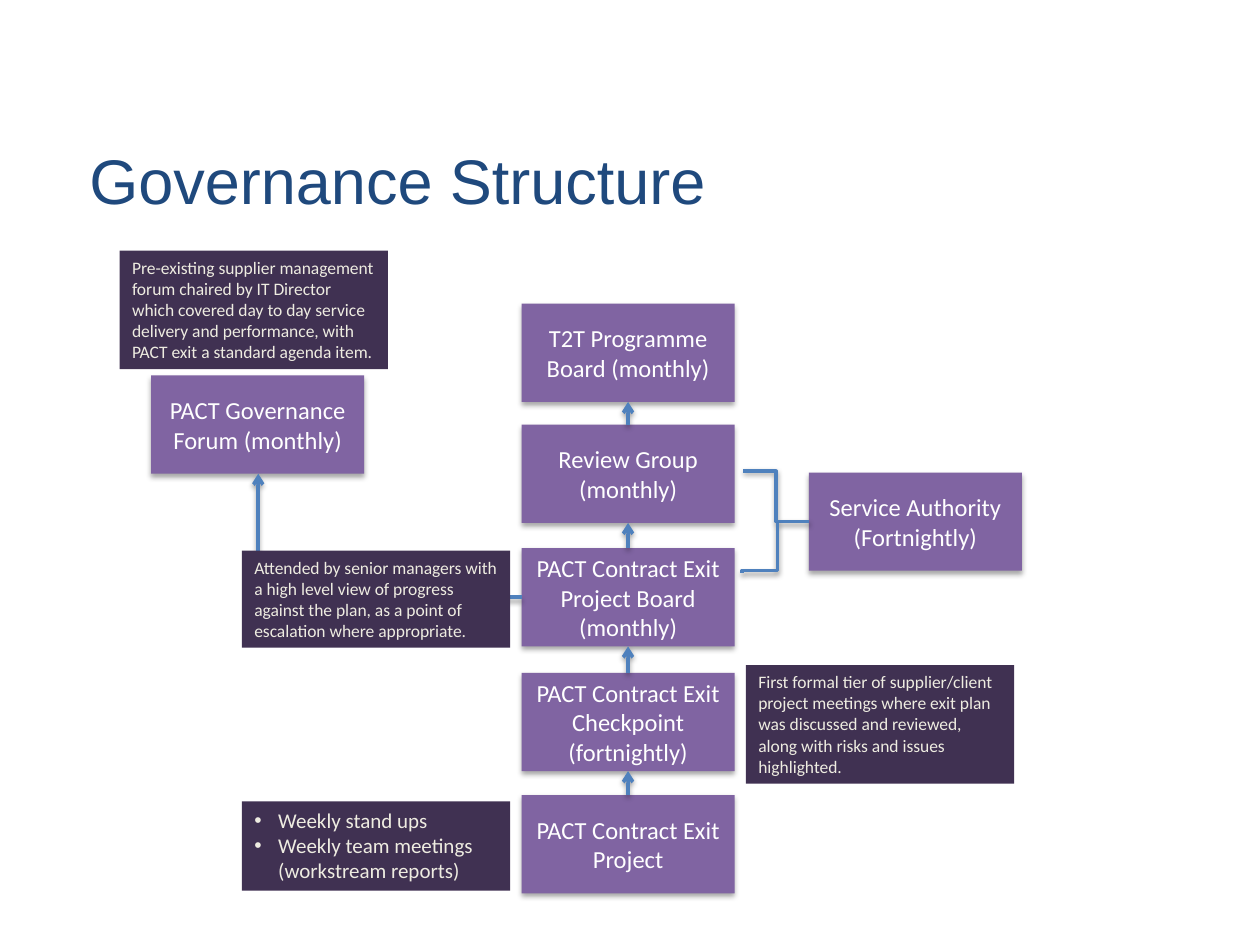
from pptx import Presentation
from pptx.dml.color import RGBColor
from pptx.enum.shapes import MSO_CONNECTOR as CONN, MSO_SHAPE as SHAPE
from pptx.enum.text import MSO_ANCHOR as ANCHOR, MSO_AUTO_SIZE as AUTO, PP_ALIGN as ALIGN
from pptx.oxml.ns import qn
from pptx.util import Inches, Pt
from lxml.etree import SubElement

COLORS = {"title": "1F497D", "box": "8064A2", "box_text": "FFFFFF",
          "line": "4F81BD", "note": "403152", "note_text": "EEECE1"}
TITLE = "Governance Structure"
BOX_W, BOX_H, NOTE_W, CHAIN_X = 1.69, 0.78, 2.13, 4.14
CHAIN = [
    ("T2T Programme Board (monthly)", 2.41),
    ("Review Group (monthly)", 3.37),
    ("PACT Contract Exit Project Board (monthly)", 4.35),
    ("PACT Contract Exit Checkpoint (fortnightly)", 5.34),
    ("PACT Contract Exit Project", 6.31),
]
SIDE_BOXES = [
    ("PACT Governance Forum (monthly)", 1.2, 2.98),
    ("Service Authority (Fortnightly)", 6.42, 3.75),
]
BOARD_TO_FORUM = (4.14, 4.74, 2.05, 3.76)
AUTHORITY_TO_REVIEW = (6.42, 4.14, 5.9, 3.74)
AUTHORITY_TO_BOARD = (6.23, 4.49, 5.83, 4.21)
NOTES = [
    (["Weekly stand ups", "Weekly team meetings (workstream reports)"], 1.92, 6.36, 0.71, 12, True),
    (["First formal tier of supplier/client project meetings where exit plan was discussed "
      "and reviewed, along with risks and issues highlighted."], 5.92, 5.28, 0.94, 10, False),
    (["Attended by senior managers with a high level view of progress against the plan, "
      "as a point of escalation where appropriate."], 1.92, 4.37, 0.77, 10, False),
    (["Pre-existing supplier management forum chaired by IT Director which covered day to day "
      "service delivery and performance, with PACT exit a standard agenda item."],
     0.95, 1.99, 0.94, 10, False),
]


def rgb(name):
    return RGBColor.from_string(COLORS[name])


def add_run(p, text, size, color, font="Calibri"):
    r = p.add_run()
    r.text = text
    r.font.size, r.font.name = Pt(size), font
    r.font.color.rgb = rgb(color)


def add_shadow(shape, alpha, dist):
    spPr = shape._element.spPr
    effects = spPr.find(qn("a:effectLst"))
    if effects is None:
        effects = SubElement(spPr, qn("a:effectLst"))
    shadow = SubElement(effects, qn("a:outerShdw"), blurRad=str(Pt(3.1)),
                        dist=str(Pt(dist)), dir="5400000", rotWithShape="0")
    color = SubElement(shadow, qn("a:srgbClr"), val="000000")
    SubElement(color, qn("a:alpha"), val=str(alpha * 1000))


def add_box(s, text, x, y):
    sp = s.shapes.add_shape(SHAPE.RECTANGLE, *map(Inches, (x, y, BOX_W, BOX_H)))
    sp.shadow.inherit = False
    add_shadow(sp, 35, 1.8)
    sp.fill.solid()
    sp.fill.fore_color.rgb = rgb("box")
    sp.line.fill.background()
    tf = sp.text_frame
    tf.word_wrap, tf.vertical_anchor = True, ANCHOR.MIDDLE
    p = tf.paragraphs[0]
    p.alignment = ALIGN.CENTER
    add_run(p, text, 14, "box_text")
    return sp


def add_line(s, kind, ends, arrow=False):
    line = s.shapes.add_connector(kind, *map(Inches, ends))
    line.line.color.rgb = rgb("line")
    line.line.width = Pt(2)
    if arrow:
        SubElement(line.line._get_or_add_ln(), qn("a:tailEnd"), type="arrow")
    add_shadow(line, 38, 1.6)
    return line


def add_note(s, paragraphs, x, y, h, size, bulleted):
    sp = s.shapes.add_textbox(*map(Inches, (x, y, NOTE_W, h)))
    sp.fill.solid()
    sp.fill.fore_color.rgb = rgb("note")
    tf = sp.text_frame
    tf.word_wrap, tf.auto_size = True, AUTO.SHAPE_TO_FIT_TEXT
    for i, text in enumerate(paragraphs):
        p = tf.add_paragraph() if i else tf.paragraphs[0]
        if bulleted:
            pPr = p._p.get_or_add_pPr()
            pPr.set("marL", str(Inches(0.19)))
            pPr.set("indent", str(Inches(-0.19)))
            SubElement(pPr, qn("a:buFont"), typeface="Arial")
            SubElement(pPr, qn("a:buChar"), char="•")
        add_run(p, text, size, "note_text")


def add_title(s):
    sp = s.shapes.title
    sp.left, sp.top, sp.width, sp.height = map(Inches, (0.61, 1.02, 8.78, 0.71))
    tf = sp.text_frame
    tf.auto_size, tf.vertical_anchor = AUTO.NONE, ANCHOR.TOP
    tf.margin_left = tf.margin_right = Inches(0.1)
    tf.margin_top, tf.margin_bottom = Inches(0.1), 0
    p = tf.paragraphs[0]
    p.alignment = ALIGN.LEFT
    add_run(p, TITLE, 36, "title", "Arial")


def main():
    """Build the governance structure slide."""
    prs = Presentation()
    prs.slide_width, prs.slide_height = Inches(10), Inches(7.5)
    s = prs.slides.add_slide(prs.slide_layouts[5])
    add_title(s)

    chain = [add_box(s, text, CHAIN_X, y) for text, y in CHAIN]
    for text, x, y in SIDE_BOXES:
        add_box(s, text, x, y)

    for upper, lower in zip(chain, chain[1:]):
        line = add_line(s, CONN.STRAIGHT, (0, 0, 0, 0), arrow=True)
        line.begin_connect(lower, 0)
        line.end_connect(upper, 2)

    forum_line = add_line(s, CONN.ELBOW, BOARD_TO_FORUM, arrow=True)
    forum_line._element.spPr.find(qn("a:prstGeom")).set("prst", "bentConnector2")
    add_line(s, CONN.ELBOW, AUTHORITY_TO_REVIEW)
    board_line = add_line(s, CONN.ELBOW, AUTHORITY_TO_BOARD)
    spPr = board_line._element.spPr
    spPr.find(qn("a:xfrm")).set("rot", "5400000")
    guides = spPr.find(qn("a:prstGeom")).find(qn("a:avLst"))
    SubElement(guides, qn("a:gd"), name="adj1", fmla="val 5200")

    for note in NOTES:
        add_note(s, *note)
    prs.save("out.pptx")


if __name__ == "__main__":
    main()
